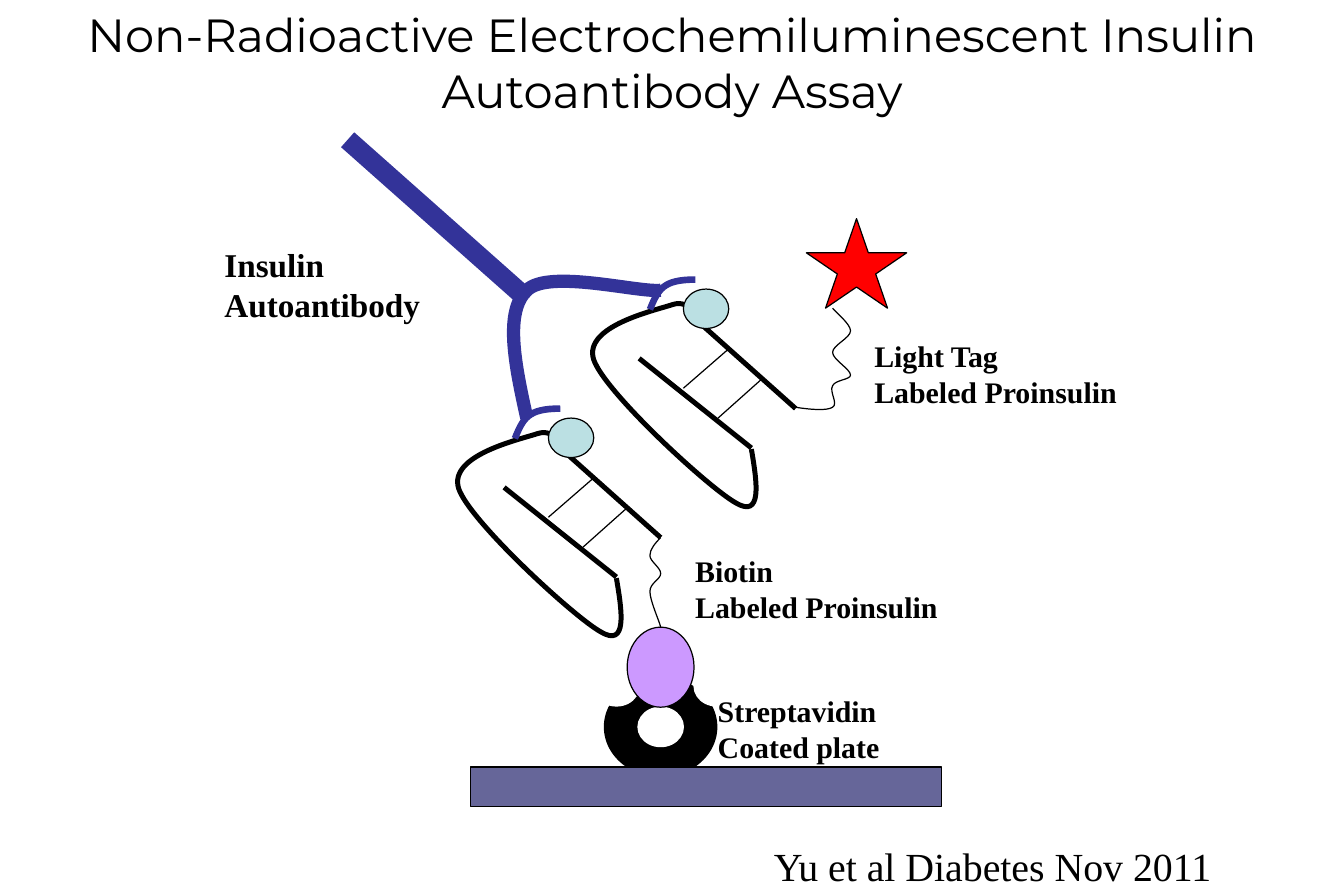
"""Draw the electrochemiluminescent insulin autoantibody assay slide."""
from typing import NamedTuple

import lxml.etree
import pptx
import pptx.dml.color
import pptx.enum.shapes
import pptx.enum.text
import pptx.oxml.ns
import pptx.util

Inches = pptx.util.Inches
SHAPE = pptx.enum.shapes.MSO_SHAPE
qn = pptx.oxml.ns.qn

COLORS = {
    "black": "000000",
    "white": "FFFFFF",
    "plate": "666699",
    "biotin": "CC99FF",
    "epitope": "BBE0E3",
    "tag": "FF0000",
    "antibody": "333399",
}
SERIF = "Times New Roman"
THIN, CHAIN, HOOK, ARM, STEM = 0.75, 3, 4, 8, 12
SITE_W, SITE_H = 0.38, 0.33


class Solid(NamedTuple):
    kind: int
    left: float
    top: float
    width: float
    height: float
    fill: str
    line: str = "black"


class Line(NamedTuple):
    x1: float
    y1: float
    x2: float
    y2: float
    weight: float
    color: str = "black"


class Curve(NamedTuple):
    points: tuple
    weight: float
    color: str = "black"


class Label(NamedTuple):
    text: str
    left: float
    top: float
    width: float
    height: float
    size: int


def rgb(name: str) -> pptx.dml.color.RGBColor:
    return pptx.dml.color.RGBColor.from_string(COLORS[name])


def set_line(shape, color: str, weight: float) -> None:
    shape.line.color.rgb = rgb(color)
    shape.line.width = pptx.util.Pt(weight)


def draw_solid(s, item: Solid) -> None:
    box = map(Inches, (item.left, item.top, item.width, item.height))
    sp = s.shapes.add_shape(item.kind, *box)
    sp.shadow.inherit = False
    sp.fill.solid()
    sp.fill.fore_color.rgb = rgb(item.fill)
    set_line(sp, item.line, THIN)


def draw_line(s, item: Line, dx: float = 0, dy: float = 0) -> None:
    ends = (item.x1 + dx, item.y1 + dy, item.x2 + dx, item.y2 + dy)
    cxn = s.shapes.add_connector(
        pptx.enum.shapes.MSO_CONNECTOR.STRAIGHT, *map(Inches, ends))
    set_line(cxn, item.color, item.weight)
    lxml.etree.SubElement(cxn._element.spPr, qn("a:effectLst"))


def draw_curve(s, item: Curve, dx: float = 0, dy: float = 0) -> None:
    points = [(Inches(x + dx), Inches(y + dy)) for x, y in item.points]
    builder = s.shapes.build_freeform(*points[0])
    builder.add_line_segments(points[1:], close=False)
    sp = builder.convert_to_shape()
    sp.shadow.inherit = False
    sp.fill.background()
    set_line(sp, item.color, item.weight)
    segments = list(sp._element.iter(qn("a:lnTo")))
    for i in range(0, len(segments), 3):
        bezier = segments[i].makeelement(qn("a:cubicBezTo"))
        segments[i].addprevious(bezier)
        for segment in segments[i:i + 3]:
            bezier.append(segment[0])
            segment.getparent().remove(segment)


def add_text(s, text: str, left: float, top: float, width: float, height: float,
             *, size: int, font: str = SERIF, bold: bool = False,
             wrap: bool = False, centered: bool = False) -> None:
    box = s.shapes.add_textbox(*map(Inches, (left, top, width, height)))
    tf = box.text_frame
    tf.word_wrap = wrap
    tf.auto_size = pptx.enum.text.MSO_AUTO_SIZE.SHAPE_TO_FIT_TEXT
    tf.text = text
    for p in tf.paragraphs:
        if centered:
            p.alignment = pptx.enum.text.PP_ALIGN.CENTER
        for r in p.runs:
            r.font.name = font
            r.font.size = pptx.util.Pt(size)
            r.font.bold = bold
            r.font.color.rgb = rgb("black")


PROINSULIN_LINES = (
    Line(4.69, 3.75, 5.53, 4.5, CHAIN),
    Line(4.22, 4.08, 5.16, 4.83, CHAIN),
    Line(4.59, 4.33, 4.97, 4, THIN),
    Line(5.25, 4.25, 4.88, 4.58, THIN),
)
PROINSULIN_LOOP = Curve((
    (5.16, 4.84), (5.21, 5.13), (5.25, 5.42), (5.03, 5.29),
    (4.81, 5.17), (3.93, 4.36), (3.84, 4.09),
    (3.75, 3.81), (4.35, 3.68), (4.5, 3.63),
    (4.65, 3.58), (4.72, 3.76), (4.76, 3.78)), CHAIN)
BINDING_HOOK = Curve(
    ((4.31, 3.67), (4.38, 3.5), (4.42, 3.42), (4.69, 3.42)), HOOK, "antibody")

CAPTURE = (
    Solid(SHAPE.OVAL, 5.06, 5.67, 0.94, 0.83, "black"),
    *(Solid(SHAPE.OVAL, x, y, SITE_W, SITE_H, "white", "white")
      for x, y in ((5.81, 5.58), (4.97, 5.58), (5.34, 5.92), (5.34, 5.25))),
    Solid(SHAPE.RECTANGLE, 3.94, 6.42, 3.94, 0.33, "plate"),
    Solid(SHAPE.OVAL, 5.25, 5.25, 0.56, 0.67, "biotin"),
)
STAR = Solid(SHAPE.STAR_5_POINT, 6.75, 1.83, 0.84, 0.75, "tag")
LINKERS = (
    Curve((
        (5.53, 4.5), (5.48, 4.55), (5.44, 4.6), (5.44, 4.65),
        (5.44, 4.7), (5.53, 4.75), (5.53, 4.8),
        (5.53, 4.85), (5.44, 4.88), (5.44, 4.95),
        (5.44, 5.03), (5.52, 5.2), (5.53, 5.25)), THIN),
    Curve((
        (6.66, 3.41), (6.79, 3.43), (6.92, 3.44), (6.97, 3.41),
        (7.02, 3.38), (6.94, 3.28), (6.97, 3.23),
        (6.99, 3.18), (7.12, 3.18), (7.12, 3.14),
        (7.12, 3.09), (6.97, 3.01), (6.97, 2.95),
        (6.97, 2.89), (7.12, 2.83), (7.12, 2.77),
        (7.12, 2.71), (6.99, 2.61), (6.97, 2.58)), THIN),
)
ANTIBODY_ARMS = Curve((
    (4.41, 3.5), (4.31, 3.05), (4.22, 2.61), (4.41, 2.43),
    (4.59, 2.25), (5.34, 2.45), (5.53, 2.43)), ARM, "antibody")
ANTIBODY_STEM = Line(4.41, 2.5, 2.91, 1.17, STEM, "antibody")
LABELS = (
    Label("Streptavidin\nCoated plate", 5.91, 5.75, 1.57, 0.71, 18),
    Label("Light Tag\nLabeled Proinsulin", 7.22, 2.78, 2.25, 0.71, 18),
    Label("Biotin\nLabeled Proinsulin", 5.72, 4.58, 2.25, 0.71, 18),
    Label("Insulin\nAutoantibody", 1.78, 2, 1.85, 0.77, 20),
)


def draw_proinsulin(s, dx: float, dy: float) -> None:
    for line in PROINSULIN_LINES:
        draw_line(s, line, dx, dy)
    draw_curve(s, PROINSULIN_LOOP, dx, dy)
    draw_solid(s, Solid(SHAPE.OVAL, 4.59 + dx, 3.5 + dy, SITE_W, SITE_H, "epitope"))
    draw_curve(s, BINDING_HOOK, dx, dy)


def main() -> None:
    prs = pptx.Presentation()
    prs.slide_width, prs.slide_height = Inches(11.25), Inches(7.5)
    s = prs.slides.add_slide(prs.slide_layouts[6])
    for solid in (*CAPTURE, STAR):
        draw_solid(s, solid)
    for linker in LINKERS:
        draw_curve(s, linker)
    for dx, dy in ((1.13, -1.08), (0, 0)):
        draw_proinsulin(s, dx, dy)
    draw_curve(s, ANTIBODY_ARMS)
    draw_line(s, ANTIBODY_STEM)
    for label in LABELS:
        add_text(s, *label[:5], size=label.size, bold=True)
    add_text(s, "Yu et al Diabetes Nov 2011", 6.38, 7, 5.72, 0.51, size=24, wrap=True)
    add_text(s, "Non-Radioactive Electrochemiluminescent Insulin Autoantibody Assay",
             0, 0, 11.25, 1.04, size=28, font="Montserrat", wrap=True, centered=True)
    prs.save("out.pptx")


if __name__ == "__main__":
    main()
